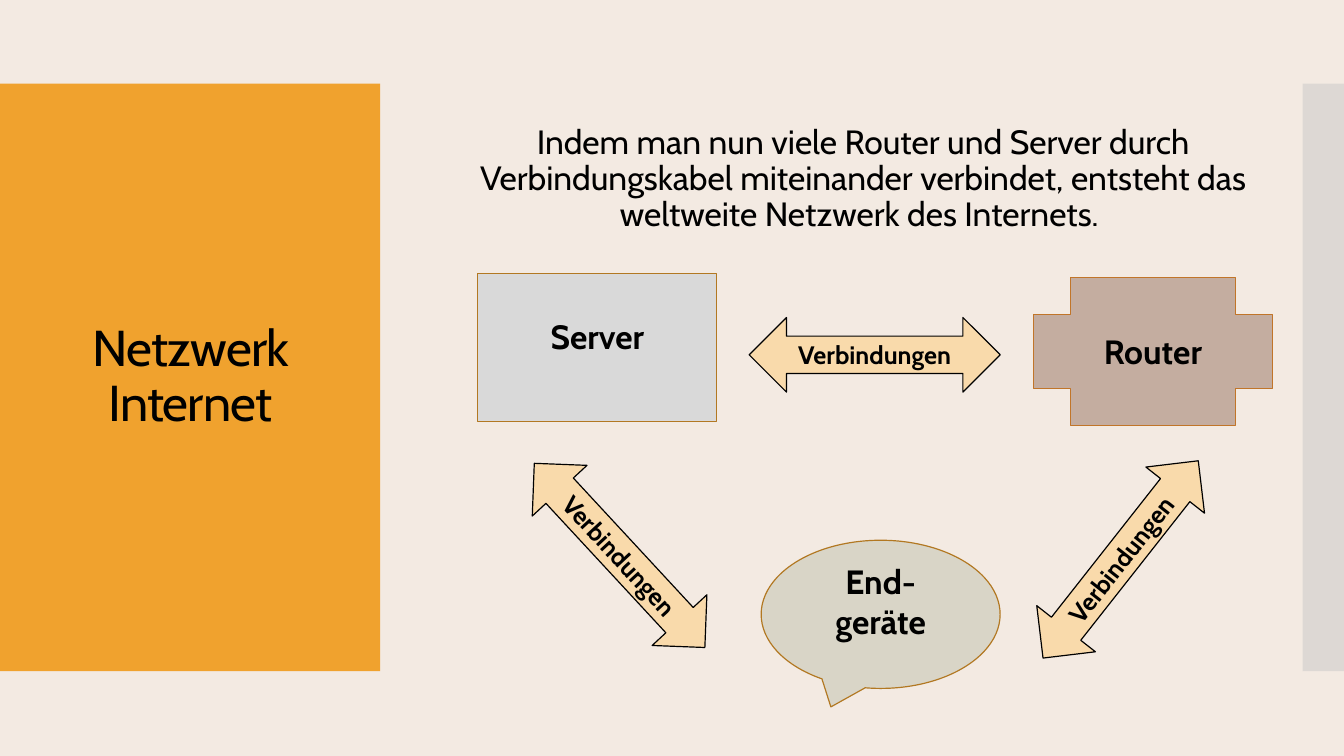
from pptx import Presentation
from pptx.dml.color import RGBColor
from pptx.enum import shapes, text
from pptx.oxml.ns import qn
from pptx.util import Inches, Pt
from lxml import etree

COLOURS = {
    "background": "F3EAE2", "orange": "F0A22E", "side": "C8C8C8",
    "server": "D9D9D9", "device": "D9D5C7", "router": "C4ADA0",
    "arrow": "F9DAAB", "brown": "B27822", "copper": "C17529", "black": "000000",
}
FONT = "Cabin"
KIND = shapes.MSO_SHAPE

TITLE = "Netzwerk Internet"
INTRO = ("Indem man nun viele Router und Server durch Verbindungskabel "
         "miteinander verbindet, entsteht das weltweite Netzwerk des Internets. ")
LINK = "Verbindungen"

PANELS = [(0, 3.77, "orange"), (12.92, 0.42, "side")]
PANEL_TOP, PANEL_HEIGHT = 0.83, 5.83

# label, shape, left, top, fill, line, lift of the label above the middle
NODES = [
    ("Server", KIND.RECTANGLE, 4.74, 2.71, "server", "brown", 0.11),
    ("End-geräte", KIND.OVAL_CALLOUT, 7.55, 5.36, "device", "brown", 0.13),
    ("Router", KIND.CROSS, 10.25, 2.75, "router", "copper", 0),
]
NODE_SIZE = (2.37, 1.47)

# left, top, rotation
ARROWS = [(7.43, 3.15, 0), (4.9, 5.14, 47.2), (9.87, 5.18, 308.2)]
ARROW_SIZE = (2.49, 0.74)


def colour(name):
    return RGBColor.from_string(COLOURS[name])


def write(shape, words, size, bold=False, line_spacing=1.0, lift=0):
    """Centre words in the shape, raised by lift inches."""
    frame = shape.text_frame
    frame.word_wrap = True
    frame.auto_size = text.MSO_AUTO_SIZE.NONE
    frame.vertical_anchor = text.MSO_ANCHOR.MIDDLE
    if lift:
        frame.margin_top, frame.margin_bottom = 0, Inches(2 * lift)
    para = frame.paragraphs[0]
    para.alignment = text.PP_ALIGN.CENTER
    para.line_spacing = line_spacing
    span = para.add_run()
    span.text = words
    span.font.name = FONT
    span.font.size = Pt(size)
    span.font.bold = bold
    span.font.color.rgb = colour("black")
    return span


def add_block(page, kind, left, top, size, fill, line=None):
    shape = page.shapes.add_shape(kind, *map(Inches, (left, top, *size)))
    shape.shadow.inherit = False
    shape.fill.solid()
    shape.fill.fore_color.rgb = colour(fill)
    if line:
        shape.line.color.rgb = colour(line)
        shape.line.width = Pt(0.85)
    else:
        shape.line.fill.background()
    return shape


def add_panels(page):
    for left, width, fill in PANELS:
        panel = add_block(page, KIND.RECTANGLE, left, PANEL_TOP,
                          (width, PANEL_HEIGHT), fill)
    side_colour = panel._element.spPr.find(qn("a:solidFill"))[0]
    etree.SubElement(side_colour, qn("a:alpha"), val="50000")


def add_title(page):
    title = page.shapes.title
    page.shapes._spTree.append(title._element)  # bring in front of the panel
    title.left, title.top = Inches(0.28), Inches(1.23)
    title.width, title.height = Inches(3.22), Inches(5.03)
    span = write(title, TITLE, 36, line_spacing=0.9)
    span.font._element.set("spc", "-60")


def main():
    deck = Presentation()
    deck.slide_width, deck.slide_height = Inches(13.33), Inches(7.5)
    page = deck.slides.add_slide(deck.slide_layouts[5])
    page.background.fill.solid()
    page.background.fill.fore_color.rgb = colour("background")

    add_panels(page)
    add_title(page)
    intro = page.shapes.add_textbox(*map(Inches, (4.65, 0.96, 7.82, 1.64)))
    write(intro, INTRO, 24, line_spacing=0.9)

    for label, kind, left, top, fill, line, lift in NODES:
        node = add_block(page, kind, left, top, NODE_SIZE, fill, line)
        write(node, label, 24, bold=True, lift=lift)
    for left, top, rotation in ARROWS:
        arrow = add_block(page, KIND.LEFT_RIGHT_ARROW, left, top, ARROW_SIZE,
                          "arrow", "black")
        arrow.rotation = rotation
        write(arrow, LINK, 18, bold=True)

    deck.save("out.pptx")


if __name__ == "__main__":
    main()
